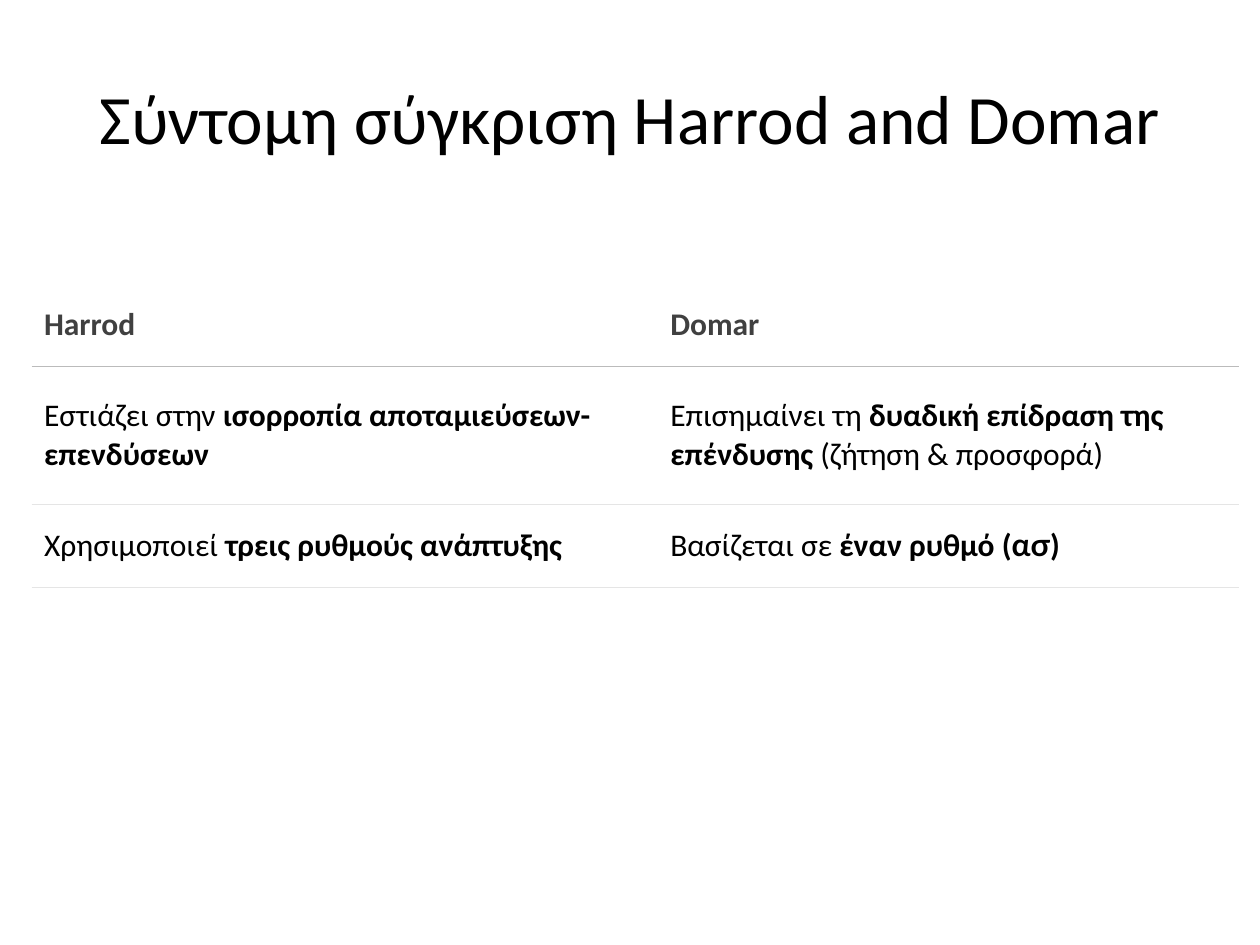
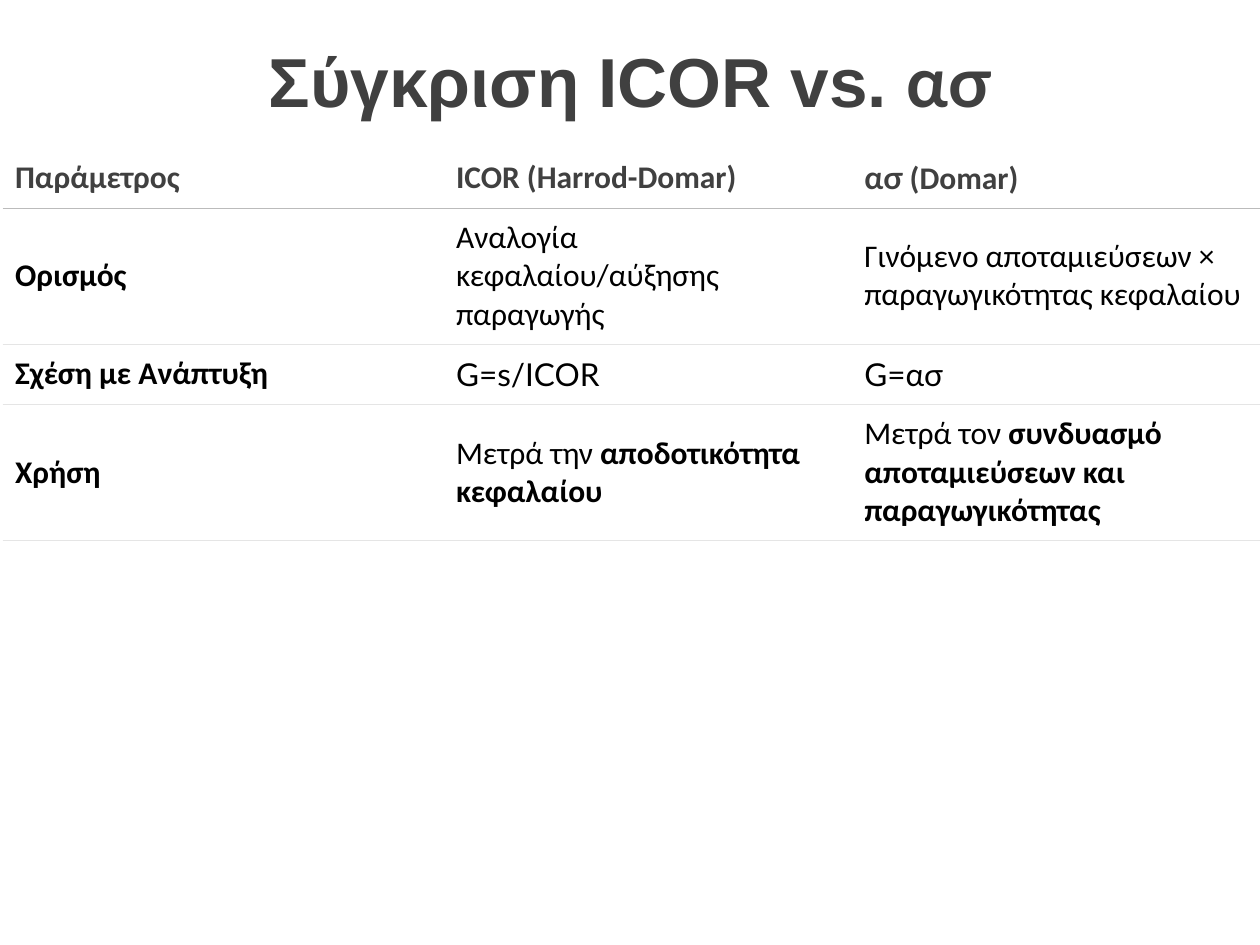
"""Builds two slides that compare the Harrod and Domar growth models in tables."""
from pptx import Presentation
from pptx.dml.color import RGBColor
from pptx.enum.text import MSO_ANCHOR as Anchor, PP_ALIGN as Align
from pptx.oxml import parse_xml
from pptx.oxml.ns import nsdecls
from pptx.util import Inches, Pt

INK, GREY, WHITE = "000000", "404040", "FFFFFF"
HEADER_RULE, ROW_RULE = "BBBBBB", "E5E5E5"
NO_GRID_STYLE = "{2D5ABB26-0587-4C30-8999-92F81FD0307C}"
TITLE_SIZE, TABLE_SIZE = 39.6, 18


def write(para, text, size, color, face="Calibri"):
    """Adds runs to a paragraph: *bold* and _Lato_ are marked in the text."""
    for bold_index, chunk in enumerate(text.split("*")):
        for lato_index, piece in enumerate(chunk.split("_")):
            if piece:
                span = para.add_run()
                span.text = piece
                span.font.name = "Lato" if lato_index % 2 else face
                span.font.size = Pt(size)
                span.font.bold = bold_index % 2 == 1
                span.font.color.rgb = RGBColor.from_string(color)


def rule(cell, side, color):
    """Draws a hairline on the top (T) or bottom (B) of a cell."""
    cell._tc.get_or_add_tcPr().insert(0, parse_xml(
        f'<a:ln{side} {nsdecls("a")} w="{Pt(0.48)}"><a:solidFill>'
        f'<a:srgbClr val="{color}"/></a:solidFill></a:ln{side}>'))


pages = [
    dict(title="Σύντομη σύγκριση Ηarrod and Domar", face="Calibri", color=INK,
         anchor=Anchor.MIDDLE, inset=0.05,
         left=0.25, top=2.25, columns=[4.99, 4.59], heights=[0.66, 1.09, 0.66],
         rows=[
             ["*Harrod*", "*Domar*"],
             ["Εστιάζει στην *ισορροπία αποταμιεύσεων-επενδύσεων*",
              "Επισημαίνει τη *δυαδική επίδραση της επένδυσης* (ζήτηση & προσφορά)"],
             ["Χρησιμοποιεί *τρεις ρυθμούς ανάπτυξης*",
              "Βασίζεται σε *έναν ρυθμό (_ασ_)*"],
         ]),
    dict(title="*Σύγκριση ICOR vs. _ασ_*", face="Arial", color=GREY,
         anchor=Anchor.TOP, inset=0,
         left=0.02, top=1.17, columns=[3.52, 3.24, 3.24], heights=[0.48, 1.08, 0.48, 1.08],
         rows=[
             ["*Παράμετρος*", "*ICOR (Harrod-Domar)*", "*_ασ_ (Domar)*"],
             ["*Ορισμός*", "Αναλογία κεφαλαίου/αύξησης παραγωγής",
              "Γινόμενο αποταμιεύσεων × παραγωγικότητας κεφαλαίου"],
             ["*Σχέση με Ανάπτυξη*", "_G=s/ICOR_", "_G=ασ_"],
             ["*Χρήση*", "Μετρά την *αποδοτικότητα κεφαλαίου*",
              "Μετρά τον *συνδυασμό αποταμιεύσεων και παραγωγικότητας*"],
         ]),
]

deck = Presentation()
deck.slide_width, deck.slide_height = Inches(10), Inches(7.5)

for content in pages:
    page = deck.slides.add_slide(deck.slide_layouts[6])

    box = page.shapes.add_textbox(
        int(deck.slide_width * 0.05), int(deck.slide_height * 0.04),
        int(deck.slide_width * 0.9), Inches(1.25))
    frame = box.text_frame
    frame.word_wrap = True
    frame.vertical_anchor = content["anchor"]
    frame.margin_top = frame.margin_bottom = Inches(content["inset"])
    para = frame.paragraphs[0]
    para.alignment = Align.CENTER
    write(para, content["title"], TITLE_SIZE, content["color"], content["face"])

    rows, columns, heights = content["rows"], content["columns"], content["heights"]
    table = page.shapes.add_table(
        len(rows), len(columns), Inches(content["left"]), Inches(content["top"]),
        Inches(sum(columns)), Inches(sum(heights))).table
    table.horz_banding = False
    table._tbl.tblPr[0].text = NO_GRID_STYLE
    for column, width in zip(table.columns, columns):
        column.width = Inches(width)

    for row_index, (row, height) in enumerate(zip(rows, heights)):
        table.rows[row_index].height = Inches(height)
        for column_index, text in enumerate(row):
            cell = table.cell(row_index, column_index)
            cell.fill.solid()
            cell.fill.fore_color.rgb = RGBColor.from_string(WHITE)
            cell.vertical_anchor = Anchor.MIDDLE
            cell.margin_left = Inches(0.08 if column_index else 0.1)
            cell.margin_right = cell.margin_top = cell.margin_bottom = Inches(0.08)
            write(cell.text_frame.paragraphs[0], text, TABLE_SIZE,
                  INK if row_index else GREY)
            rule(cell, "B", ROW_RULE if row_index else HEADER_RULE)
            if row_index:
                rule(cell, "T", ROW_RULE if row_index > 1 else HEADER_RULE)

deck.save("out.pptx")
